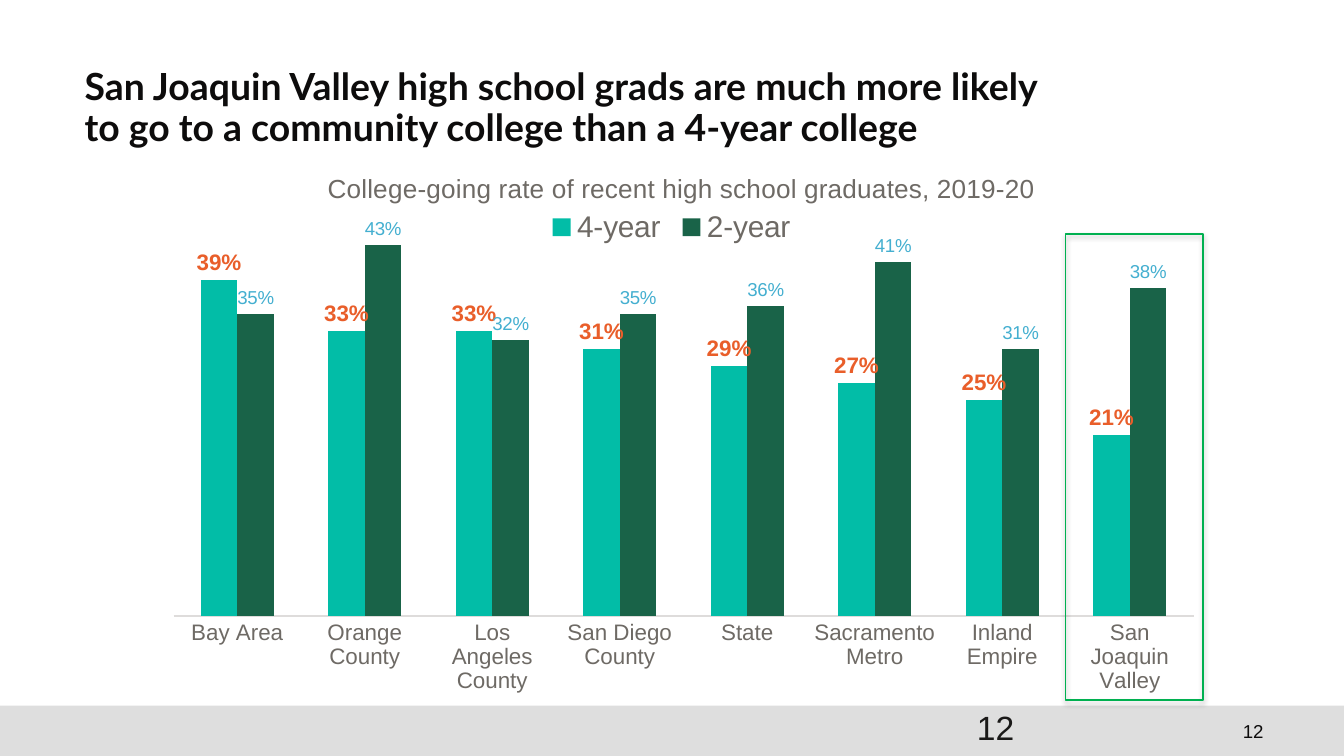
from dataclasses import dataclass

from lxml import etree
from pptx import Presentation, util as u
from pptx.chart.data import CategoryChartData
from pptx.dml.color import RGBColor
from pptx.enum import chart as ch, shapes, text
from pptx.oxml import parse_xml
from pptx.oxml.ns import nsdecls, qn


@dataclass(frozen=True)
class Theme:
    heading: str = "Lato"
    body: str = "Arial"
    ink: str = "0D0C0C"
    dark: str = "1A1918"
    muted: str = "6E6A65"
    rule: str = "DEDCDB"
    footer: str = "DEDEDE"
    highlight: str = "00B050"
    four_year: str = "02BDA7"
    two_year: str = "196348"
    orange: str = "E95E2A"
    blue: str = "44AFD0"
    title: int = 20
    number: int = 18
    legend: int = 16
    chart_title: int = 14
    label: int = 12
    small: int = 10


def rgb(value):
    return RGBColor.from_string(value)


def set_font(font, name, size, color, bold=False):
    font.name, font.size, font.bold = name, u.Pt(size), bold
    font.color.rgb = rgb(color)


def set_layout(element, before, target=None, **percents):
    for old in element.findall(qn("c:layout")):
        element.remove(old)
    layout = parse_xml(f"<c:layout {nsdecls('c')}><c:manualLayout/></c:layout>")
    values = {"layoutTarget": target} if target else {}
    values.update(xMode="edge", yMode="edge")
    values.update({tag: percent / 100 for tag, percent in percents.items()})
    for tag, value in values.items():
        etree.SubElement(layout[0], qn(f"c:{tag}")).set("val", str(value))
    element.find(qn(f"c:{before}")).addprevious(layout)


class Deck:
    def __init__(self, theme):
        self.t = theme
        self.prs = Presentation()
        self.prs.slide_width = u.Inches(10)
        self.prs.slide_height = self.prs.slide_width * 9 // 16
        self.s = self.prs.slides.add_slide(self.prs.slide_layouts[6])

    def rect(self, box, fill=None, line=None):
        sp = self.s.shapes.add_shape(shapes.MSO_SHAPE.RECTANGLE, *map(u.Inches, box))
        sp.shadow.inherit = False
        if fill:
            sp.fill.solid()
            sp.fill.fore_color.rgb = rgb(fill)
        else:
            sp.fill.background()
        if line:
            sp.line.color.rgb = rgb(line)
            sp.line.width = u.Pt(0.75)
        else:
            sp.line.fill.background()
        return sp

    def drop_shadow(self, sp):
        effects = sp._element.spPr.find(qn("a:effectLst"))
        effects.append(parse_xml(
            f'<a:outerShdw {nsdecls("a")} blurRad="{u.Pt(3.1)}" dist="{u.Pt(1.8)}" '
            'dir="5400000" rotWithShape="0"><a:srgbClr val="000000">'
            '<a:alpha val="35000"/></a:srgbClr></a:outerShdw>'))

    def text(self, box, words, font, size, color, bold=False, inset=True,
             align=text.PP_ALIGN.LEFT, anchor=text.MSO_ANCHOR.TOP, spacing=1.0):
        tf = self.s.shapes.add_textbox(*map(u.Inches, box)).text_frame
        tf.word_wrap = True
        tf.vertical_anchor = anchor
        if not inset:
            tf.margin_left = tf.margin_top = tf.margin_right = tf.margin_bottom = 0
        p = tf.paragraphs[0]
        p.text, p.alignment, p.line_spacing = words, align, spacing
        set_font(p.font, font, size, color, bold)

    def column_chart(self, box, title, cats, series):
        t = self.t
        data = CategoryChartData(number_format="0%")
        data.categories = cats
        for name, values, *_ in series:
            data.add_series(name, values)
        chart = self.s.shapes.add_chart(
            ch.XL_CHART_TYPE.COLUMN_CLUSTERED, *map(u.Inches, box), data).chart
        set_font(chart.font, t.body, t.label, t.dark)

        chart.has_title = True
        p = chart.chart_title.text_frame.paragraphs[0]
        p.text = title
        set_font(p.font, t.body, t.chart_title, t.muted)
        chart.chart_title.include_in_layout = False
        set_layout(chart.chart_title._element, "overlay", x=20.9, y=0.5)

        chart.has_legend = True
        chart.legend.position = ch.XL_LEGEND_POSITION.BOTTOM
        chart.legend.include_in_layout = False
        set_font(chart.legend.font, t.body, t.legend, t.muted)
        set_layout(chart.legend._element, "overlay", x=40, y=7.8, w=23, h=8)

        axis = chart.category_axis
        axis.major_tick_mark = axis.minor_tick_mark = ch.XL_TICK_MARK.NONE
        set_font(axis.tick_labels.font, t.body, t.label, t.muted)
        axis.format.line.color.rgb = rgb(t.rule)
        axis.format.line.width = u.Pt(0.75)
        axis = chart.value_axis
        axis.minimum_scale, axis.maximum_scale = 0, 0.5
        axis.has_major_gridlines = False
        axis.visible = False

        plot = chart.plots[0]
        plot.gap_width, plot.overlap, plot.vary_by_categories = 150, 0, False
        set_layout(plot._element.getparent(), "barChart", target="inner",
                   x=7.8, y=3.9, w=89.5, h=80.4)
        for bars, (_, _, fill, color, size, bold) in zip(plot.series, series):
            bars.format.fill.solid()
            bars.format.fill.fore_color.rgb = rgb(fill)
            labels = bars.data_labels
            labels.show_value = True
            labels.number_format, labels.number_format_is_linked = "0%", False
            labels.position = ch.XL_LABEL_POSITION.OUTSIDE_END
            set_font(labels.font, t.body, size, color, bold)


def main():
    t = Theme()
    deck = Deck(t)
    deck.rect((0, 5.25, 10, 0.38), fill=t.footer)
    deck.text((7.17, 5.25, 2.33, 0.38), "12", t.body, t.small, t.ink,
              align=text.PP_ALIGN.RIGHT, anchor=text.MSO_ANCHOR.MIDDLE)
    deck.text((0.63, 0.51, 7.37, 0.8),
              "San Joaquin Valley high school grads are much more likely "
              "to go to a community college than a 4-year college",
              t.heading, t.title, t.ink, bold=True, inset=False, spacing=0.9)
    deck.text((7.17, 5.21, 2.33, 0.3), "12", t.body, t.number, t.dark)
    deck.column_chart(
        (0.63, 1.22, 8.48, 3.99),
        "College-going rate of recent high school graduates, 2019-20",
        ["Bay Area", "Orange County", "Los Angeles County", "San Diego County",
         "State", "Sacramento Metro", "Inland Empire", "San Joaquin Valley"],
        [("4-year", [0.39, 0.33, 0.33, 0.31, 0.29, 0.27, 0.25, 0.21],
          t.four_year, t.orange, t.label, True),
         ("2-year", [0.35, 0.43, 0.32, 0.35, 0.36, 0.41, 0.31, 0.38],
          t.two_year, t.blue, t.small, False)])
    deck.drop_shadow(deck.rect((7.93, 1.74, 1.02, 3.47), line=t.highlight))
    deck.prs.save("out.pptx")


if __name__ == "__main__":
    main()
